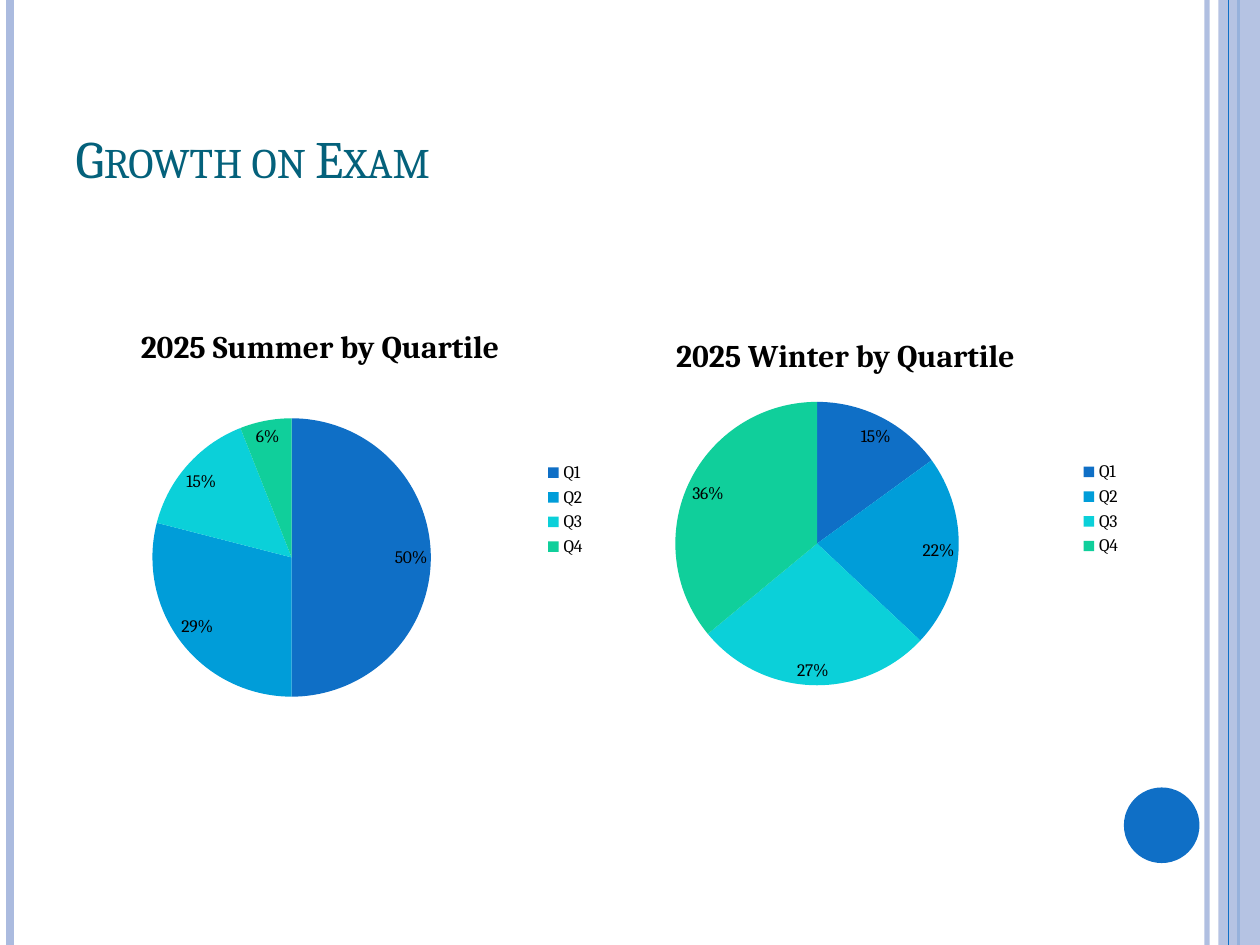
from lxml import etree
from pptx import Presentation
from pptx.chart import data
from pptx.dml import color
from pptx.enum import chart as kinds, shapes, text
from pptx.oxml import ns
from pptx.util import Inches, Pt

theme = {
    "font": "Cambria", "title": "04617B", "ink": "000000",
    "pale": "ABBBDF", "blue": "0F6FC6", "back": "FFFFFF",
    "parts": ["0F6FC6", "009DD9", "0BD0D9", "10CF9B"],
    "sizes": {"title": 30, "head": 18, "label": 10},
}


def style(font, size, tint, bold=False):
    form = {"name": theme["font"], "size": Pt(theme["sizes"][size]), "bold": bold}
    for key, val in form.items():
        setattr(font, key, val)
    font.color.rgb = color.RGBColor.from_string(theme[tint])


def paint(fill, tint, alpha=100):
    fill.solid()
    fill.fore_color.rgb = color.RGBColor.from_string(tint)
    if alpha < 100:
        node = fill._xPr.find(".//" + ns.qn("a:srgbClr"))
        etree.SubElement(node, ns.qn("a:alpha"), val=str(alpha * 1000))


deck = Presentation()
deck.slide_width, deck.slide_height = Inches(10), Inches(7.5)
slide = deck.slides.add_slide(deck.slide_layouts[5])
paint(slide.background.fill, theme["back"])

bars = [(9.58, "pale", 3, 93), (0.08, "pale", 4.5, 100),
        (9.83, "blue", 1.5, 100), (9.75, "blue", 0.75, 100)]
for left, tint, width, alpha in bars:
    if left == 9.75:
        band = slide.shapes.add_shape(
            shapes.MSO_SHAPE.RECTANGLE, Inches(9.67), 0, Inches(0.33), Inches(7.5))
        band.shadow.inherit = False
        paint(band.fill, theme["pale"], 87)
        band.line.fill.background()
    bar = slide.shapes.add_connector(
        shapes.MSO_CONNECTOR.STRAIGHT, Inches(left), 0, Inches(left), Inches(7.5))
    bar.line.width = Pt(width)
    paint(bar.line.fill, theme[tint], alpha)
    etree.SubElement(bar._element.spPr, ns.qn("a:effectLst"))

dot = slide.shapes.add_shape(
    shapes.MSO_SHAPE.OVAL, Inches(8.92), Inches(6.25), Inches(0.6), Inches(0.6))
dot.shadow.inherit = False
paint(dot.fill, theme["blue"])
dot.line.fill.background()

title = slide.shapes.title
place = {"left": 0.5, "top": 0.3, "width": 8.17, "height": 1.25}
for key, val in place.items():
    setattr(title, key, Inches(val))
frame = title.text_frame
frame.text = "Growth on Exam"
frame.word_wrap = True
frame.vertical_anchor = text.MSO_ANCHOR.BOTTOM
frame.paragraphs[0].alignment = text.PP_ALIGN.LEFT
run = frame.paragraphs[0].runs[0]
style(run.font, "title", "title")
run._r.get_or_add_rPr().set("cap", "small")

pies = [
    ("2025 Summer by Quartile", (50, 29, 15, 6), (0.33, 2.42, 4.42, 3.25), (1.21, 3.32, 2.21)),
    ("2025 Winter by Quartile", (15, 22, 27, 36), (4.42, 2.5, 4.58, 3.08), (5.36, 3.19, 2.25)),
]
for head, vals, box, disc in pies:
    table = data.CategoryChartData()
    table.categories = ["Q1", "Q2", "Q3", "Q4"]
    table.add_series("Series 1", vals)
    chart = slide.shapes.add_chart(
        kinds.XL_CHART_TYPE.PIE, *map(Inches, box), table).chart
    style(chart.font, "label", "ink")
    chart.has_title = True
    chart.chart_title.include_in_layout = False
    chart.chart_title.text_frame.text = head
    style(chart.chart_title.text_frame.paragraphs[0].runs[0].font, "head", "ink", True)
    chart.has_legend = True
    chart.legend.position = kinds.XL_LEGEND_POSITION.RIGHT
    chart.legend.include_in_layout = False
    style(chart.legend.font, "label", "ink")

    plot = chart.plots[0]
    plot.vary_by_categories = True
    plot.has_data_labels = True
    form = {"show_percentage": True, "show_value": False, "number_format": "0%",
            "number_format_is_linked": False,
            "position": kinds.XL_LABEL_POSITION.BEST_FIT}
    for key, val in form.items():
        setattr(plot.data_labels, key, val)
    style(plot.data_labels.font, "label", "ink")
    for spot, tint in enumerate(theme["parts"]):
        paint(plot.series[0].points[spot].format.fill, tint)

    area = chart._chartSpace.chart.plotArea
    for old in area.findall(ns.qn("c:layout")):
        area.remove(old)
    lay = etree.Element(ns.qn("c:layout"))
    area.insert(0, lay)
    manual = etree.SubElement(lay, ns.qn("c:manualLayout"))
    left, top, width, height = box
    x, y, size = disc
    rules = {"layoutTarget": "inner", "xMode": "edge", "yMode": "edge",
             "x": (x - left) / width, "y": (y - top) / height,
             "w": size / width, "h": size / height}
    for key, val in rules.items():
        etree.SubElement(manual, ns.qn("c:" + key), val=str(val))

deck.save("out.pptx")
